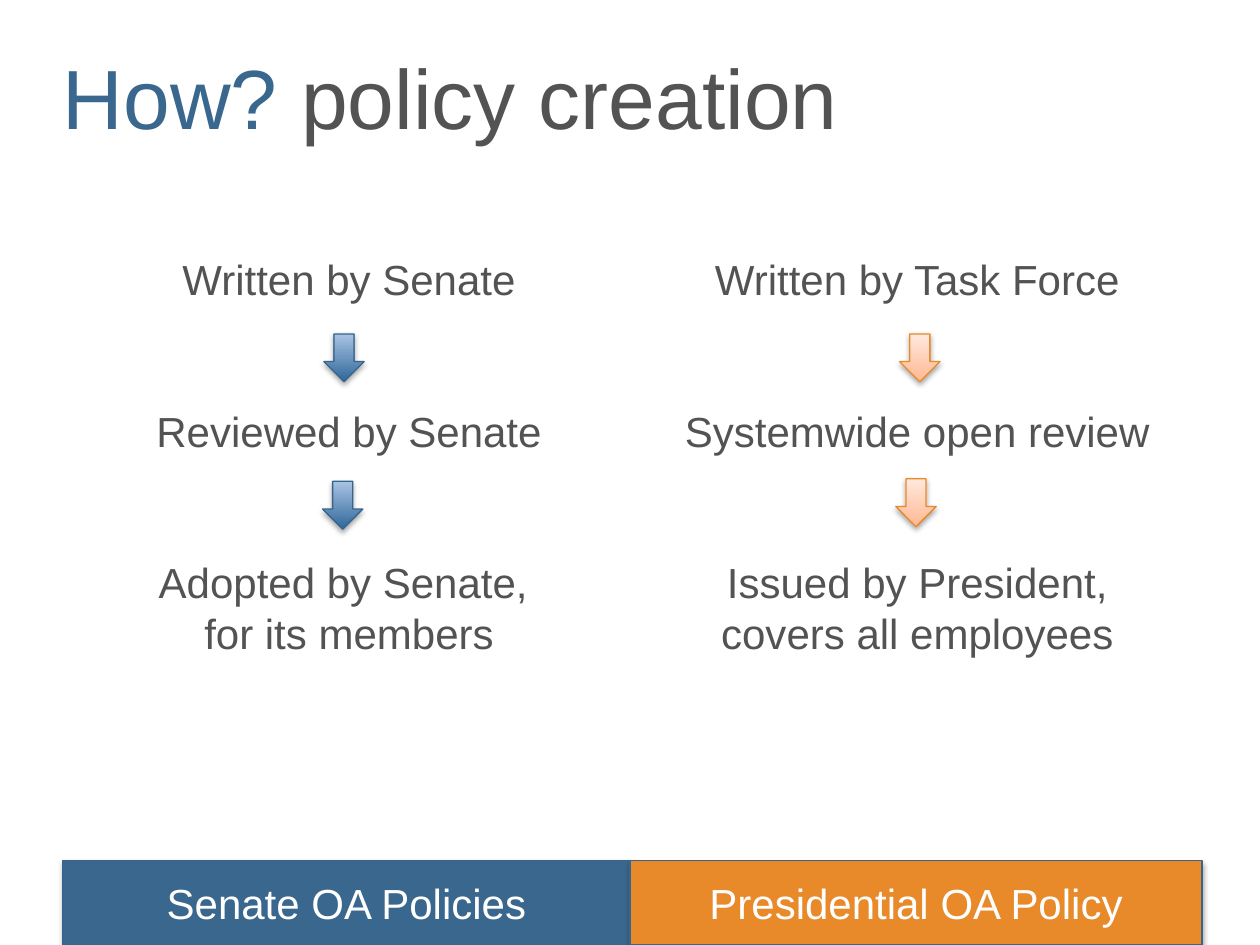
from lxml import etree
from pptx import Presentation
from pptx.dml.color import RGBColor
from pptx.enum.shapes import MSO_SHAPE
from pptx.enum.text import MSO_ANCHOR, PP_ALIGN
from pptx.oxml.ns import qn
from pptx.util import Inches, Pt

RECTANGLE, DOWN_ARROW = MSO_SHAPE.RECTANGLE, MSO_SHAPE.DOWN_ARROW
CENTER, MIDDLE = PP_ALIGN.CENTER, MSO_ANCHOR.MIDDLE
BLUE, ORANGE, GRAY, WHITE, OUTLINE = "3A678D", "E98A2A", "535353", "FFFFFF", "37658C"

presentation = Presentation()
presentation.slide_width, presentation.slide_height = Inches(10), Inches(7.5)
slide = presentation.slides.add_slide(presentation.slide_layouts[6])


def add_run(paragraph, text, size, color):
    run = paragraph.add_run()
    run.text = text
    formats = {"name": "Arial", "size": Pt(size)}
    for name, value in formats.items():
        setattr(run.font, name, value)
    run.font.color.rgb = RGBColor.from_string(color)


def add_shadowed_shape(kind, left, top, width, height, line_color):
    shape = slide.shapes.add_shape(
        kind, Inches(left), Inches(top), Inches(width), Inches(height))
    shape.line.color.rgb = RGBColor.from_string(line_color)
    shape.line.width = Pt(0.75)
    shape.shadow.inherit = False
    effects = shape._element.spPr.find(qn("a:effectLst"))
    shadow = etree.SubElement(effects, qn("a:outerShdw"), blurRad=str(Pt(3.1)),
                              dist=str(Pt(1.8)), dir="5400000", rotWithShape="0")
    color = etree.SubElement(shadow, qn("a:srgbClr"), val="000000")
    etree.SubElement(color, qn("a:alpha"), val="35000")
    return shape


# Title
title = slide.shapes.add_textbox(Inches(0.5), Inches(0.5), Inches(9.04), Inches(0.69))
frame = title.text_frame
frame.word_wrap = True
for side in ("left", "top", "right", "bottom"):
    setattr(frame, f"margin_{side}", 0)
heading = frame.paragraphs[0]
heading.line_spacing = 0.82
heading.space_before = Pt(9.6)
add_run(heading, "How? ", 48, BLUE)
add_run(heading, "policy creation", 48, GRAY)

# Two columns: steps, arrows between them, and the resulting policy at the foot
columns = [
    {"left": 0.5, "width": 4.5, "text_left": 0.52,
     "steps": ["Written by Senate", "Reviewed by Senate",
               "Adopted by Senate, \vfor its members"],
     "arrows": [(2.57, 2.65), (2.56, 3.82)], "gradient": ("2E6899", "AAC3E5"),
     "arrow_line": OUTLINE, "policy": "Senate OA Policies", "color": BLUE},
    {"left": 5, "width": 4.54, "text_left": 5.01,
     "steps": ["Written by Task Force", "Systemwide open review",
               "Issued by President,\vcovers all employees"],
     "arrows": [(7.14, 2.65), (7.11, 3.8)], "gradient": ("FFB893", "FFE8DE"),
     "arrow_line": ORANGE, "policy": "Presidential OA Policy", "color": ORANGE},
]

for column in columns:
    # Steps
    steps = slide.shapes.add_textbox(Inches(column["text_left"]), Inches(1.96),
                                     Inches(column["width"]), Inches(3.33))
    frame = steps.text_frame
    frame.word_wrap = True
    for index, step in enumerate(column["steps"]):
        paragraph = frame.add_paragraph() if index else frame.paragraphs[0]
        paragraph.alignment = CENTER
        paragraph.space_before = Pt(58 if index else 0)
        for number, line in enumerate(step.split("\v")):
            if number:
                paragraph.add_line_break()
            add_run(paragraph, line, 24, GRAY)

    # Arrows
    for left, top in column["arrows"]:
        arrow = add_shadowed_shape(DOWN_ARROW, left, top, 0.32, 0.38, column["arrow_line"])
        arrow.fill.gradient()
        arrow.fill.gradient_angle = 90
        for stop, color in zip(arrow.fill.gradient_stops, column["gradient"]):
            stop.color.rgb = RGBColor.from_string(color)

    # Policy bar
    bar = add_shadowed_shape(RECTANGLE, column["left"], 6.83, column["width"], 0.67, OUTLINE)
    bar.fill.solid()
    bar.fill.fore_color.rgb = RGBColor.from_string(column["color"])
    bar.text_frame.vertical_anchor = MIDDLE
    paragraph = bar.text_frame.paragraphs[0]
    paragraph.alignment = CENTER
    add_run(paragraph, column["policy"], 24, WHITE)

presentation.save("out.pptx")
